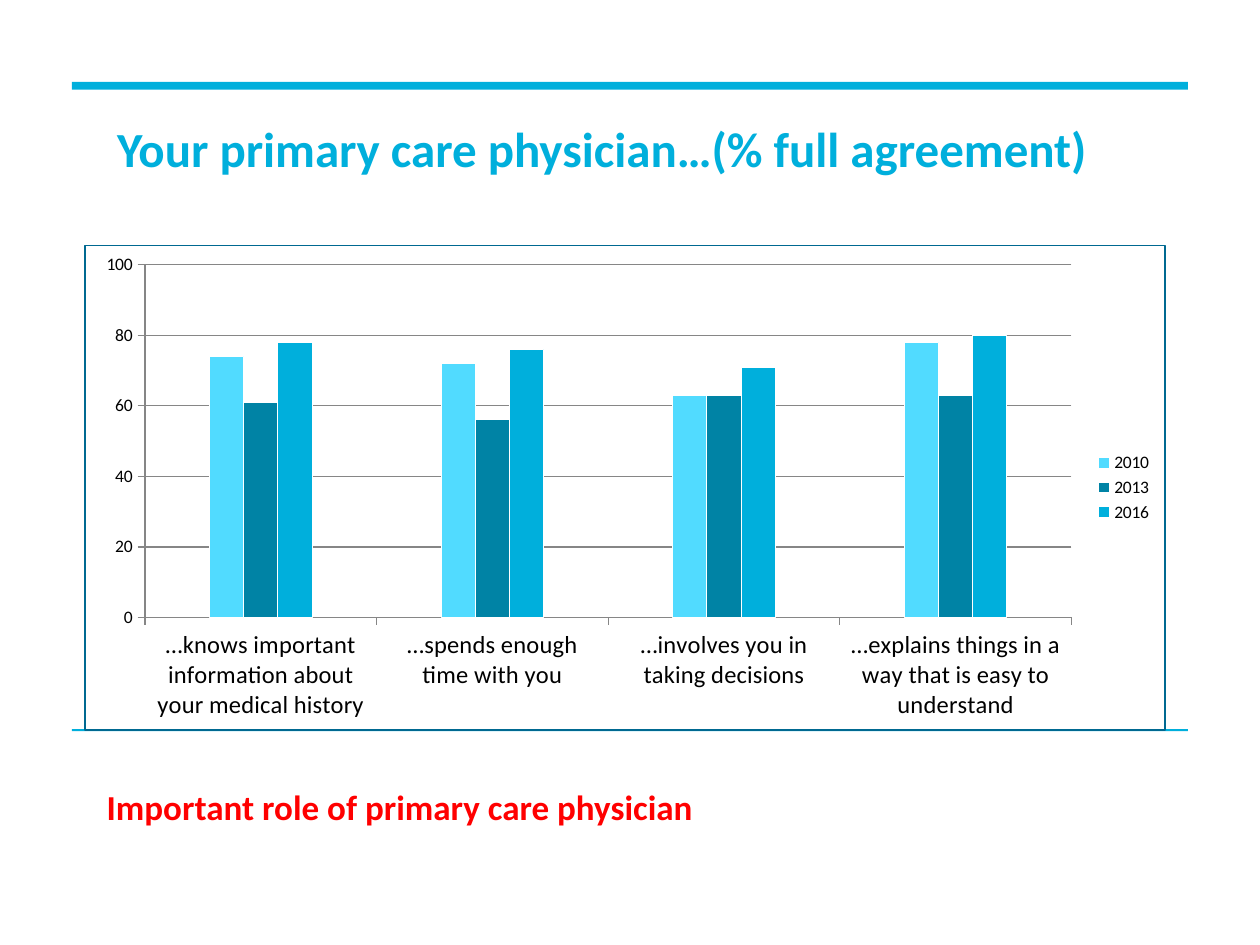
from lxml import etree
from pptx import Presentation
from pptx import util as u
from pptx.chart import data
from pptx.dml.color import RGBColor
from pptx.enum import chart as ch
from pptx.enum import shapes, text
from pptx.oxml import parse_xml
from pptx.oxml.ns import nsdecls, qn

CYAN = RGBColor(0x00, 0xAF, 0xDC)
LIGHT_CYAN = RGBColor(0x51, 0xDB, 0xFF)
DARK_CYAN = RGBColor(0x00, 0x83, 0xA5)
FRAME_BLUE = RGBColor(0x00, 0x69, 0x91)
GRAY = RGBColor(0x86, 0x86, 0x86)
RED = RGBColor(0xFF, 0x00, 0x00)
BLACK = RGBColor(0x00, 0x00, 0x00)
WHITE = RGBColor(0xFF, 0xFF, 0xFF)

QUESTIONS = [
    "…knows important information about your medical history",
    "…spends enough time with you",
    "…involves you in taking decisions",
    "…explains things in a way that is easy to understand",
]
AGREEMENT = [
    ("2010", (74, 72, 63, 78), LIGHT_CYAN),
    ("2013", (61, 56, 63, 63), DARK_CYAN),
    ("2016", (78, 76, 71, 80), CYAN),
]


class SlideBuilder:
    font_name = "Calibri"

    def __init__(self, slide):
        self.slide = slide

    def style(self, font, size, color, bold=False):
        font.name = self.font_name
        font.size = u.Pt(size)
        font.bold = bold
        font.color.rgb = color

    def box(self, left, top, width, height):
        return u.Cm(left), u.Cm(top), u.Cm(width), u.Cm(height)

    def rule(self, top, height):
        bar = self.slide.shapes.add_shape(
            shapes.MSO_SHAPE.RECTANGLE, *self.box(1.45, top, 22.5, height))
        bar.shadow.inherit = False
        bar.fill.solid()
        bar.fill.fore_color.rgb = CYAN
        bar.line.fill.background()

    def title(self, words, place):
        title = self.slide.shapes.title
        title.left, title.top, title.width, title.height = self.box(*place)
        frame = title.text_frame
        frame.text = words
        frame.word_wrap = True
        frame.auto_size = text.MSO_AUTO_SIZE.NONE
        frame.vertical_anchor = text.MSO_ANCHOR.TOP
        frame.margin_left = frame.margin_right = 0
        frame.margin_top = frame.margin_bottom = 0
        line = frame.paragraphs[0]
        line.alignment = text.PP_ALIGN.LEFT
        line.line_spacing = u.Pt(22)
        self.style(line.runs[0].font, 28, CYAN, bold=True)

    def note(self, words, place):
        frame = self.slide.shapes.add_textbox(*self.box(*place)).text_frame
        frame.word_wrap = True
        frame.auto_size = text.MSO_AUTO_SIZE.SHAPE_TO_FIT_TEXT
        frame.text = words
        self.style(frame.paragraphs[0].runs[0].font, 20, RED, bold=True)

    def columns(self, categories, series, place):
        values = data.CategoryChartData()
        values.categories = categories
        for year, shares, _ in series:
            values.add_series(year, shares)
        chart = self.slide.shapes.add_chart(
            ch.XL_CHART_TYPE.COLUMN_CLUSTERED, *self.box(*place), values).chart
        self.style(chart.font, 10, BLACK)
        chart.has_title = False
        chart.has_legend = True
        chart.legend.position = ch.XL_LEGEND_POSITION.RIGHT
        chart.legend.include_in_layout = False

        plot = chart.plots[0]
        plot.gap_width = 378
        plot.overlap = 0
        plot.vary_by_categories = False
        for column, (_, _, color) in zip(plot.series, series):
            column.format.fill.solid()
            column.format.fill.fore_color.rgb = color
            column.format.line.color.rgb = WHITE
            column.format.line.width = u.Pt(0.5)

        scale = chart.value_axis
        scale.minimum_scale, scale.maximum_scale = 0, 100
        scale.major_unit = 20
        scale.has_major_gridlines = True
        self.style(chart.category_axis.tick_labels.font, 14, BLACK)
        for axis in (scale, chart.category_axis):
            axis.major_tick_mark = ch.XL_TICK_MARK.OUTSIDE
            axis.minor_tick_mark = ch.XL_TICK_MARK.NONE
        for part in (scale, scale.major_gridlines, chart.category_axis):
            part.format.line.color.rgb = GRAY
            part.format.line.width = u.Pt(0.75)
        self.frame_chart(chart)

    def frame_chart(self, chart):
        properties = parse_xml(f"<c:spPr {nsdecls('c', 'a')}><a:noFill/></c:spPr>")
        outline = etree.SubElement(properties, qn("a:ln"), w=str(u.Pt(0.75)))
        fill = etree.SubElement(outline, qn("a:solidFill"))
        etree.SubElement(fill, qn("a:srgbClr"), val=str(FRAME_BLUE))
        chart.element.find(qn("c:chart")).addnext(properties)


def main():
    deck = Presentation()
    deck.slide_width, deck.slide_height = u.Cm(25.4), u.Cm(19.05)
    builder = SlideBuilder(deck.slides.add_slide(deck.slide_layouts[5]))
    builder.rule(14.7, 0.04)
    builder.rule(1.65, 0.16)
    builder.title("Your primary care physician…(% full agreement)", (2.36, 2.8, 20.7, 1.48))
    builder.columns(QUESTIONS, AGREEMENT, (1.7, 4.93, 21.8, 9.8))
    builder.note("Important role of primary care physician", (1.9, 15.72, 17.8, 1.11))
    deck.save("out.pptx")


if __name__ == "__main__":
    main()
